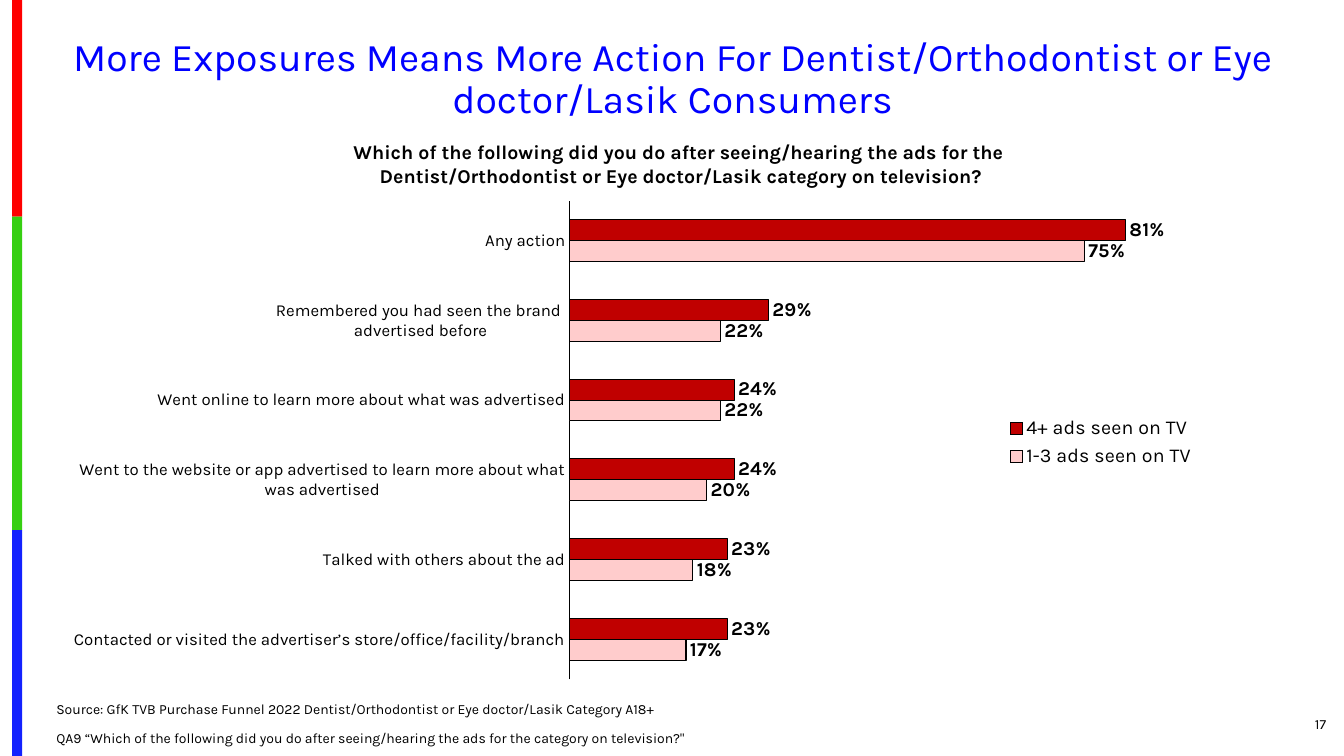
from pptx import Presentation
from pptx.chart.data import CategoryChartData as Data
from pptx.dml.color import RGBColor as RGB
from pptx.enum.chart import XL_CHART_TYPE as Kind, XL_LABEL_POSITION as Spot
from pptx.enum.chart import XL_LEGEND_POSITION as Side, XL_TICK_MARK as Tick
from pptx.enum.shapes import MSO_SHAPE as Form
from pptx.enum.text import MSO_ANCHOR as Anchor, PP_ALIGN as Align
from pptx.oxml import parse_xml
from pptx.oxml.ns import nsdecls
from pptx.util import Pt

PX = 9144
theme = {
    "font": "Karla", "ink": "000000", "title": "0000FF",
    "stripes": ["FE0000", "36CF12", "1322FE"],
    "few": "FFCCCC", "many": "C00000",
    "head": 28, "lead": 14, "label": 12, "note": 10,
}


def style(font, size, color="ink", bold=False):
    font.name = theme["font"]
    font.size = Pt(theme[size])
    font.bold = bold
    font.color.rgb = RGB.from_string(theme[color])


def write(box, lines, size, color="ink", bold=False, align=Align.LEFT,
          anchor=Anchor.TOP, pitch=1.0, gap=0):
    frame = slide.shapes.add_textbox(*[n * PX for n in box]).text_frame
    frame.word_wrap = True
    frame.vertical_anchor = anchor
    frame.text = "\n".join(lines)
    for i, para in enumerate(frame.paragraphs):
        para.alignment = align
        para.line_spacing = pitch
        para.space_before = Pt(gap if i else 0)
        for run in para.runs:
            style(run.font, size, color, bold)


deck = Presentation()
deck.slide_width, deck.slide_height = 1333 * PX, 750 * PX
slide = deck.slides.add_slide(deck.slide_layouts[6])

edges = [0, 215, 526, 750]
for top, end, color in zip(edges, edges[1:], theme["stripes"]):
    bar = slide.shapes.add_shape(
        Form.RECTANGLE, 12 * PX, top * PX, 10 * PX, (end - top) * PX)
    bar.shadow.inherit = False
    bar.fill.solid()
    bar.fill.fore_color.rgb = RGB.from_string(color)
    bar.line.fill.background()

data = Data(number_format="0%")
data.categories = [
    "Contacted or visited the advertiser’s store/office/facility/branch",
    "Talked with others about the ad",
    "Went to the website or app advertised to learn more about what was advertised",
    "Went online to learn more about what was advertised",
    "Remembered you had seen the brand \nadvertised before",
    "Any action",
]
data.add_series("1-3 ads seen on TV", [0.17, 0.18, 0.20, 0.22, 0.22, 0.75])
data.add_series("4+ ads seen on TV", [0.23, 0.23, 0.24, 0.24, 0.29, 0.81])
chart = slide.shapes.add_chart(
    Kind.BAR_CLUSTERED, 62 * PX, 184 * PX, 1226 * PX, 500 * PX, data).chart
style(chart.font, "note")
chart.has_title = False

cats = chart.category_axis
style(cats.tick_labels.font, "label")
cats.major_tick_mark = cats.minor_tick_mark = Tick.NONE
cats.format.line.color.rgb = RGB.from_string(theme["ink"])
cats.format.line.width = Pt(1)
vals = chart.value_axis
vals.minimum_scale, vals.maximum_scale = 0, 0.9
vals.has_major_gridlines = False
vals.visible = False

plot = chart.plots[0]
plot.gap_width, plot.overlap = 182, 0
plot.vary_by_categories = False
for row, color in zip(plot.series, ["few", "many"]):
    row.format.fill.solid()
    row.format.fill.fore_color.rgb = RGB.from_string(theme[color])
    row.format.line.color.rgb = RGB.from_string(theme["ink"])
    row.format.line.width = Pt(0.75)
    tags = row.data_labels
    tags.show_value = True
    tags.number_format, tags.number_format_is_linked = "0%", False
    tags.position = Spot.OUTSIDE_END
    style(tags.font, "lead", bold=True)

chart.has_legend = True
key = chart.legend
key.position = Side.RIGHT
key.include_in_layout = False
style(key.font, "lead")

area = chart._chartSpace.chart.plotArea
for old in area.xpath("c:layout"):
    area.remove(old)
frames = [
    (area, 0, '<c:layoutTarget val="inner"/>', (0.41, 0.03, 0.5, 0.95)),
    (key._element, 1, "", (0.76, 0.45, 0.16, 0.12)),
]
for node, slot, aim, sizes in frames:
    for old in node.xpath("c:layout"):
        node.remove(old)
    modes = '<c:xMode val="edge"/><c:yMode val="edge"/>'
    spans = "".join(f'<c:{n} val="{v}"/>' for n, v in zip("xywh", sizes))
    node.insert(slot, parse_xml(
        f'<c:layout {nsdecls("c")}><c:manualLayout>{aim}{modes}{spans}'
        "</c:manualLayout></c:layout>"))

write((46, 32, 1242, 95), [
    "More Exposures Means More Action For Dentist/Orthodontist or Eye doctor/Lasik Consumers",
], "head", "title", align=Align.CENTER, pitch=0.9)
write((203, 134, 945, 57), [
    "Which of the following did you do after seeing/hearing the ads for the ",
    "Dentist/Orthodontist or Eye doctor/Lasik category on television?",
], "lead", bold=True, align=Align.CENTER)
write((46, 692, 945, 54), [
    "Source: GfK TVB Purchase Funnel 2022 Dentist/Orthodontist or Eye doctor/Lasik Category A18+",
    "QA9 “Which of the following did you do after seeing/hearing the ads for the category on television?\"",
], "note", anchor=Anchor.BOTTOM, pitch=0.9, gap=10)
write((1217, 698, 108, 40), ["17"], "note", align=Align.RIGHT, anchor=Anchor.MIDDLE)

deck.save("out.pptx")
